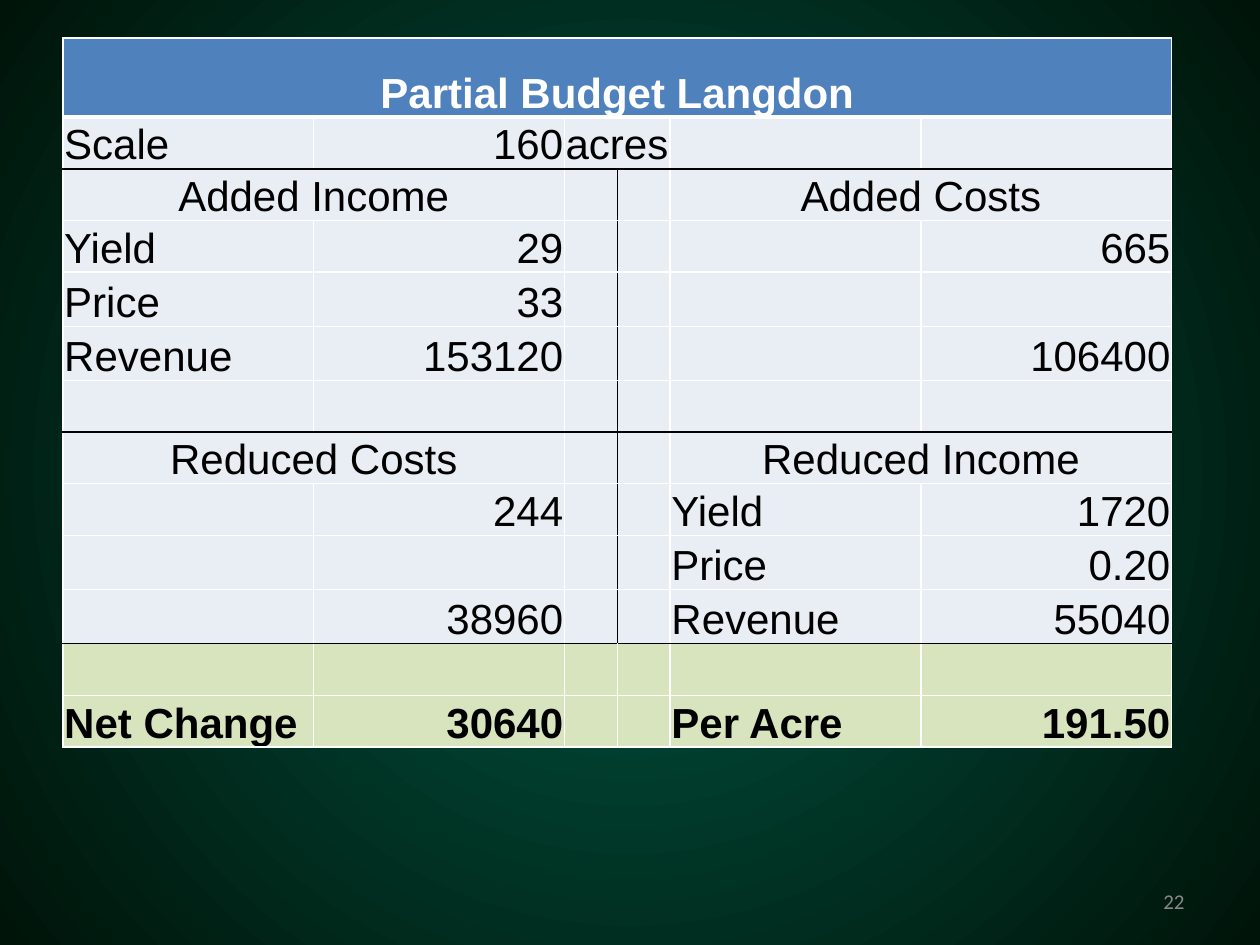
from lxml import etree
from pptx import Presentation
from pptx.dml.color import RGBColor
from pptx.enum.text import MSO_ANCHOR, PP_ALIGN
from pptx.oxml.ns import qn
from pptx.util import Inches, Pt

LEFT, CENTER, RIGHT = PP_ALIGN.LEFT, PP_ALIGN.CENTER, PP_ALIGN.RIGHT
BOTTOM, MIDDLE = MSO_ANCHOR.BOTTOM, MSO_ANCHOR.MIDDLE

WHITE = RGBColor(0xFF, 0xFF, 0xFF)
BLACK = RGBColor(0x00, 0x00, 0x00)
GRAY = RGBColor(0x89, 0x89, 0x89)
HEADER_BLUE = RGBColor(0x4F, 0x81, 0xBD)
BODY_BLUE = RGBColor(0xE9, 0xED, 0xF4)
RESULT_GREEN = RGBColor(0xD7, 0xE4, 0xBD)
CENTER_GREEN = RGBColor(0x00, 0x56, 0x43)
EDGE_GREEN = RGBColor(0x00, 0x14, 0x09)

# Content
BUDGET = [
    ["Partial Budget Langdon", "", "", "", "", ""],
    ["Scale", "160", "acres", "", "", ""],
    ["Added Income", "", "", "", "Added Costs", ""],
    ["Yield", "29", "", "", "", "665"],
    ["Price", "33", "", "", "", ""],
    ["Revenue", "153120", "", "", "", "106400"],
    ["", "", "", "", "", ""],
    ["Reduced Costs", "", "", "", "Reduced Income", ""],
    ["", "244", "", "", "Yield", "1720"],
    ["", "", "", "", "Price", "0.20"],
    ["", "38960", "", "", "Revenue", "55040"],
    ["", "", "", "", "", ""],
    ["Net Change", "30640", "", "", "Per Acre", "191.50"],
]
PAGE_NUMBER = "22"

# Table layout
COLUMN_WIDTHS = [1.99, 1.99, 0.42, 0.42, 1.99, 1.99]
TITLE_HEIGHT, ROW_HEIGHT, TALL_HEIGHT = 0.63, 0.41, 0.43
TALL_ROWS = {4, 5, 9, 10}
SECTION_ROWS = {2, 7}
RULED_ROWS = {1, 6, 10}         # black rule below these rows
DIVIDED_ROWS = range(2, 11)     # black rule between columns 2 and 3
FIRST_RESULT_ROW = 11
NUMBER_COLUMNS = {1, 5}
MERGES = [(0, 0, 5), (1, 2, 3)] + [
    (row, first, first + 1) for row in sorted(SECTION_ROWS) for first in (0, 4)]


def set_background(slide):
    """Radial gradient from the slide centre to its corners."""
    fill = slide.background.fill
    fill.gradient()
    for stop, color, position in zip(fill.gradient_stops, (CENTER_GREEN, EDGE_GREEN), (0, 1)):
        stop.color.rgb = color
        stop.position = position
    gradient = next(slide.background._cSld.iter(qn("a:gradFill")))
    for linear in gradient.findall(qn("a:lin")):
        gradient.remove(linear)
    path = etree.Element(qn("a:path"), path="circle")
    etree.SubElement(path, qn("a:fillToRect"), l="50000", t="50000", r="50000", b="50000")
    gradient.find(qn("a:gsLst")).addnext(path)


def set_borders(cell, borders):
    """Borders are (colour, points) for left, right, top and bottom."""
    properties = cell._tc.get_or_add_tcPr()
    for index, (tag, (color, points)) in enumerate(zip(("lnL", "lnR", "lnT", "lnB"), borders)):
        line = etree.Element(qn(f"a:{tag}"), w=str(Pt(points)))
        solid = etree.SubElement(line, qn("a:solidFill"))
        etree.SubElement(solid, qn("a:srgbClr"), val=str(color))
        properties.insert(index, line)


def row_border(row):
    """Border below a row."""
    if row == 0:
        return WHITE, 3
    return (BLACK if row in RULED_ROWS else WHITE), 1


def column_border(row, column):
    """Border to the right of a column."""
    return (BLACK if column == 2 and row in DIVIDED_ROWS else WHITE), 1


def add_text(frame, text, size, font_name, color, alignment, bold=False):
    paragraph = frame.paragraphs[0]
    paragraph.alignment = alignment
    run = paragraph.add_run()
    run.text = text
    run.font.size = Pt(size)
    run.font.name = font_name
    run.font.bold = bold
    run.font.color.rgb = color


def format_cell(cell, row, column, text):
    is_title, is_result = row == 0, row >= FIRST_RESULT_ROW
    cell.fill.solid()
    cell.fill.fore_color.rgb = (
        HEADER_BLUE if is_title else RESULT_GREEN if is_result else BODY_BLUE)
    cell.margin_left = cell.margin_right = cell.margin_top = Inches(0.01)
    cell.margin_bottom = 0
    cell.vertical_anchor = BOTTOM
    top = row_border(row - 1) if row else (WHITE, 1)
    set_borders(cell, (column_border(row, column - 1), column_border(row, column),
                       top, row_border(row)))
    if text:
        if is_title or row in SECTION_ROWS:
            alignment = CENTER
        else:
            alignment = RIGHT if column in NUMBER_COLUMNS else LEFT
        add_text(cell.text_frame, text, 24, "Arial", WHITE if is_title else BLACK,
                 alignment, bold=is_title or is_result)


def add_budget_table(slide):
    heights = [TITLE_HEIGHT] + [
        TALL_HEIGHT if row in TALL_ROWS else ROW_HEIGHT for row in range(1, len(BUDGET))]
    table = slide.shapes.add_table(
        len(BUDGET), len(COLUMN_WIDTHS), Inches(0.5), Inches(0.3),
        Inches(sum(COLUMN_WIDTHS)), Inches(sum(heights))).table
    for column, width in zip(table.columns, COLUMN_WIDTHS):
        column.width = Inches(width)
    for row, height in zip(table.rows, heights):
        row.height = Inches(height)
    for row, first, last in MERGES:
        table.cell(row, first).merge(table.cell(row, last))
    for row, texts in enumerate(BUDGET):
        for column, text in enumerate(texts):
            format_cell(table.cell(row, column), row, column, text)


def add_page_number(slide):
    box = slide.shapes.add_textbox(Inches(7.17), Inches(6.95), Inches(2.33), Inches(0.4))
    box.text_frame.word_wrap = True
    box.text_frame.vertical_anchor = MIDDLE
    add_text(box.text_frame, PAGE_NUMBER, 12, "Calibri", GRAY, RIGHT)


def main():
    presentation = Presentation()
    presentation.slide_width, presentation.slide_height = Inches(10), Inches(7.5)
    slide = presentation.slides.add_slide(presentation.slide_layouts[6])
    set_background(slide)
    add_budget_table(slide)
    add_page_number(slide)
    presentation.save("out.pptx")


if __name__ == "__main__":
    main()
